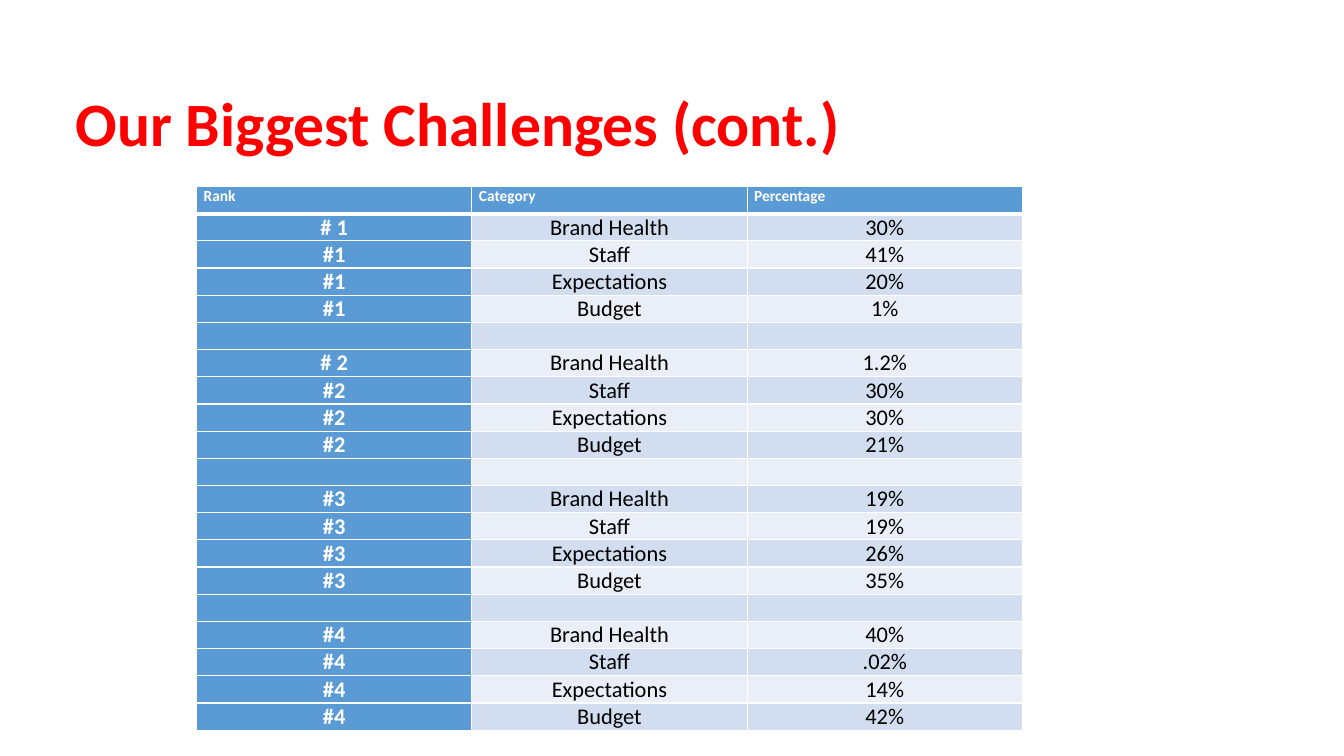
from dataclasses import dataclass

from lxml.etree import SubElement
from pptx import Presentation
from pptx.dml.color import RGBColor
from pptx.enum.text import MSO_ANCHOR, PP_ALIGN
from pptx.oxml.ns import qn
from pptx.util import Inches, Pt

COLORS = {
    "title": "FF0000",
    "accent": "5B9BD5",
    "band_dark": "D2DEEF",
    "band_light": "EAEFF7",
    "white": "FFFFFF",
    "black": "000000",
}
FONT = "Calibri"
HEADERS = ("Rank", "Category", "Percentage")
CATEGORIES = ("Brand Health", "Staff", "Expectations", "Budget")
COLUMN_WIDTH, ROW_HEIGHT = 2.73, 0.27


@dataclass
class RankGroup:
    first_label: str
    label: str
    percentages: tuple[str, ...]

    def rows(self) -> list[tuple[str, ...]]:
        labels = [self.first_label] + [self.label] * (len(CATEGORIES) - 1)
        return list(zip(labels, CATEGORIES, self.percentages))


@dataclass
class TextStyle:
    size: float
    color: str
    bold: bool
    align: PP_ALIGN = PP_ALIGN.LEFT


GROUPS = (
    RankGroup("# 1", "#1", ("30%", "41%", "20%", "1%")),
    RankGroup("# 2", "#2", ("1.2%", "30%", "30%", "21%")),
    RankGroup("#3", "#3", ("19%", "19%", "26%", "35%")),
    RankGroup("#4", "#4", ("40%", ".02%", "14%", "42%")),
)
TITLE_STYLE = TextStyle(44, "title", True)
HEADER_STYLE = TextStyle(11, "white", True)
RANK_STYLE = TextStyle(16, "white", True, PP_ALIGN.CENTER)
BODY_STYLE = TextStyle(16, "black", False, PP_ALIGN.CENTER)


def rgb(name: str) -> RGBColor:
    return RGBColor.from_string(COLORS[name])


def write_text(frame, text: str, style: TextStyle) -> None:
    para = frame.paragraphs[0]
    para.alignment = style.align
    para.font.name = FONT
    para.font.size = Pt(style.size)
    para.font.bold = style.bold
    para.font.color.rgb = rgb(style.color)
    if text:
        para.add_run().text = text
    else:
        # An empty cell needs its size on the paragraph end to keep the row low
        SubElement(para._p, qn("a:endParaRPr"), sz=str(style.size * 100))


def add_borders(cell, top: float, bottom: float) -> None:
    properties = cell._tc.get_or_add_tcPr()
    for side, width in (("L", 1), ("R", 1), ("T", top), ("B", bottom)):
        line = SubElement(properties, qn(f"a:ln{side}"), w=str(Pt(width)))
        fill = SubElement(line, qn("a:solidFill"))
        SubElement(fill, qn("a:srgbClr"), val=COLORS["white"])


def add_title(page) -> None:
    box = page.shapes.add_textbox(Inches(0.65), Inches(0.53), Inches(11.5), Inches(1.45))
    frame = box.text_frame
    frame.word_wrap = True
    frame.vertical_anchor = MSO_ANCHOR.MIDDLE
    write_text(frame, "Our Biggest Challenges (cont.)", TITLE_STYLE)
    frame.paragraphs[0].line_spacing = 0.9


def style_cell(cell, row: int, column: int, text: str) -> None:
    if row == 0:
        style, fill = HEADER_STYLE, "accent"
    elif column == 0:
        style, fill = RANK_STYLE, "accent"
    else:
        style, fill = BODY_STYLE, "band_dark" if row % 2 else "band_light"
    cell.margin_left = cell.margin_right = Inches(0.07)
    cell.margin_top = cell.margin_bottom = 0
    add_borders(cell, top=3 if row == 1 else 1, bottom=3 if row == 0 else 1)
    cell.fill.solid()
    cell.fill.fore_color.rgb = rgb(fill)
    write_text(cell.text_frame, text, style)


def add_ranking_table(page) -> None:
    # Header, then the groups with an empty row between them
    rows = [HEADERS]
    for index, group in enumerate(GROUPS):
        if index:
            rows.append(("",) * len(HEADERS))
        rows.extend(group.rows())

    table = page.shapes.add_table(
        len(rows), len(HEADERS), Inches(1.95), Inches(1.85),
        Inches(COLUMN_WIDTH * len(HEADERS)), Inches(ROW_HEIGHT * len(rows)),
    ).table
    table.first_col = True
    for column in table.columns:
        column.width = Inches(COLUMN_WIDTH)
    for row_index, texts in enumerate(rows):
        table.rows[row_index].height = Inches(ROW_HEIGHT)
        for column_index, text in enumerate(texts):
            style_cell(table.cell(row_index, column_index), row_index, column_index, text)


def main() -> None:
    deck = Presentation()
    deck.slide_width, deck.slide_height = Inches(13.33), Inches(7.5)
    page = deck.slides.add_slide(deck.slide_layouts[6])
    add_title(page)
    add_ranking_table(page)
    deck.save("out.pptx")


if __name__ == "__main__":
    main()
